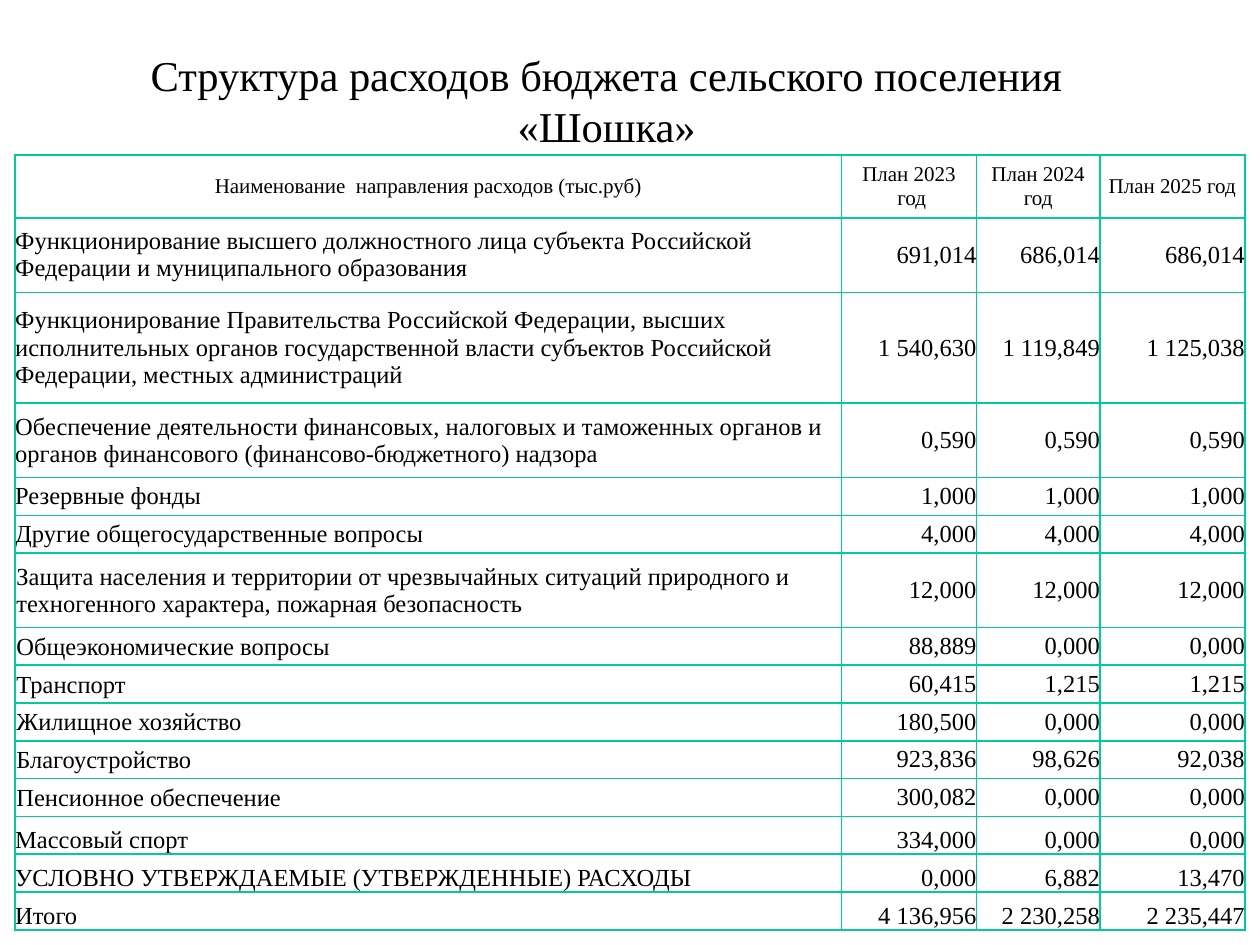
from dataclasses import dataclass

from lxml.etree import SubElement
from pptx import Presentation
from pptx.dml.color import RGBColor
from pptx.enum.text import MSO_ANCHOR, PP_ALIGN
from pptx.oxml.ns import qn
from pptx.table import _Cell
from pptx.text.text import TextFrame
from pptx.util import Inches, Pt

FONT = "Times New Roman"
COLORS = {"text": "000000", "border": "00CC99", "background": "FFFFFF"}
COLUMN_WIDTHS = (6.56, 1.07, 0.98, 1.15)
HEADER_HEIGHT = 0.5
# Row height by the number of text lines in the label
HEIGHT_BY_LINES = {1: 0.3, 2: 0.59, 3: 0.88}


@dataclass
class Expense:
    label: str
    plans: tuple[str, str, str]
    lines: int = 1
    anchor: MSO_ANCHOR = MSO_ANCHOR.MIDDLE
    align: PP_ALIGN = PP_ALIGN.LEFT
    inset: float = 0


HEADINGS = (
    "Наименование  направления расходов (тыс.руб)",
    "План 2023\n год",
    "План 2024 год",
    "План 2025 год",
)
BOTTOM, JUSTIFY = MSO_ANCHOR.BOTTOM, PP_ALIGN.JUSTIFY
EXPENSES = (
    Expense("Функционирование высшего должностного лица субъекта Российской "
            "Федерации и муниципального образования",
            ("691,014", "686,014", "686,014"), lines=2),
    Expense("Функционирование Правительства Российской Федерации, высших "
            "исполнительных органов государственной власти субъектов "
            "Российской Федерации, местных администраций",
            ("1 540,630", "1 119,849", "1 125,038"), lines=3),
    Expense("Обеспечение деятельности финансовых, налоговых и таможенных "
            "органов и органов финансового (финансово-бюджетного) надзора",
            ("0,590", "0,590", "0,590"), lines=2),
    Expense("Резервные фонды", ("1,000", "1,000", "1,000")),
    Expense("Другие общегосударственные вопросы", ("4,000", "4,000", "4,000")),
    Expense("Защита населения и территории от чрезвычайных ситуаций "
            "природного и техногенного характера, пожарная безопасность",
            ("12,000", "12,000", "12,000"), lines=2, inset=0.01),
    Expense("Общеэкономические вопросы", ("88,889", "0,000", "0,000"),
            align=JUSTIFY, inset=0.01),
    Expense("Транспорт", ("60,415", "1,215", "1,215"), align=JUSTIFY, inset=0.01),
    Expense("Жилищное хозяйство", ("180,500", "0,000", "0,000"),
            align=JUSTIFY, inset=0.01),
    Expense("Благоустройство", ("923,836", "98,626", "92,038"),
            align=JUSTIFY, inset=0.01),
    Expense("Пенсионное обеспечение", ("300,082", "0,000", "0,000"), inset=0.01),
    Expense("Массовый спорт", ("334,000", "0,000", "0,000"), anchor=BOTTOM),
    Expense("УСЛОВНО УТВЕРЖДАЕМЫЕ (УТВЕРЖДЕННЫЕ) РАСХОДЫ",
            ("0,000", "6,882", "13,470"), anchor=BOTTOM),
    Expense("Итого", ("4 136,956", "2 230,258", "2 235,447"), anchor=BOTTOM),
)


def write_text(frame: TextFrame, text: str, size: float, align: PP_ALIGN) -> None:
    frame.text = text
    for paragraph in frame.paragraphs:
        paragraph.alignment = align
        for run in paragraph.runs:
            run.font.name = FONT
            run.font.size = Pt(size)
            run.font.color.rgb = RGBColor.from_string(COLORS["text"])


def add_borders(cell: _Cell) -> None:
    properties = cell._tc.get_or_add_tcPr()
    for position, side in enumerate(("a:lnL", "a:lnR", "a:lnT", "a:lnB")):
        border = SubElement(properties, qn(side), w=str(Pt(1)))
        fill = SubElement(border, qn("a:solidFill"))
        SubElement(fill, qn("a:srgbClr"), val=COLORS["border"])
        # Borders come before the cell fill in the schema
        properties.insert(position, border)


def fill_cell(cell: _Cell, text: str, size: float, align: PP_ALIGN,
              anchor: MSO_ANCHOR = MSO_ANCHOR.MIDDLE, inset: float = 0) -> None:
    write_text(cell.text_frame, text, size, align)
    cell.vertical_anchor = anchor
    cell.margin_left = cell.margin_right = cell.margin_top = Inches(inset)
    cell.margin_bottom = 0
    cell.fill.solid()
    cell.fill.fore_color.rgb = RGBColor.from_string(COLORS["background"])
    add_borders(cell)


def main() -> None:
    presentation = Presentation()
    presentation.slide_width, presentation.slide_height = Inches(10), Inches(7.5)
    slide = presentation.slides.add_slide(presentation.slide_layouts[5])

    # Title
    title = slide.shapes.title
    title.left, title.top = Inches(0.89), Inches(0.4)
    title.width, title.height = Inches(7.85), Inches(0.78)
    title.text_frame.margin_top = title.text_frame.margin_bottom = 0
    title.text_frame.vertical_anchor = MSO_ANCHOR.MIDDLE
    write_text(title.text_frame,
               "Структура расходов бюджета сельского поселения «Шошка»",
               24.3, PP_ALIGN.CENTER)

    # Table grid
    heights = [HEADER_HEIGHT] + [HEIGHT_BY_LINES[item.lines] for item in EXPENSES]
    budget = slide.shapes.add_table(
        len(heights), len(COLUMN_WIDTHS), Inches(0.12), Inches(1.23),
        Inches(sum(COLUMN_WIDTHS)), Inches(sum(heights))).table
    budget.first_row = budget.horz_banding = False
    for column, width in zip(budget.columns, COLUMN_WIDTHS):
        column.width = Inches(width)
    for row, height in zip(budget.rows, heights):
        row.height = Inches(height)

    # Headings
    for column_index, heading in enumerate(HEADINGS):
        fill_cell(budget.cell(0, column_index), heading, 12, PP_ALIGN.CENTER)

    # Expenses by direction
    for row_index, expense in enumerate(EXPENSES, start=1):
        fill_cell(budget.cell(row_index, 0), expense.label, 14,
                  expense.align, expense.anchor, expense.inset)
        for column_index, plan in enumerate(expense.plans, start=1):
            fill_cell(budget.cell(row_index, column_index), plan, 14,
                      PP_ALIGN.RIGHT, expense.anchor)

    presentation.save("out.pptx")


if __name__ == "__main__":
    main()
